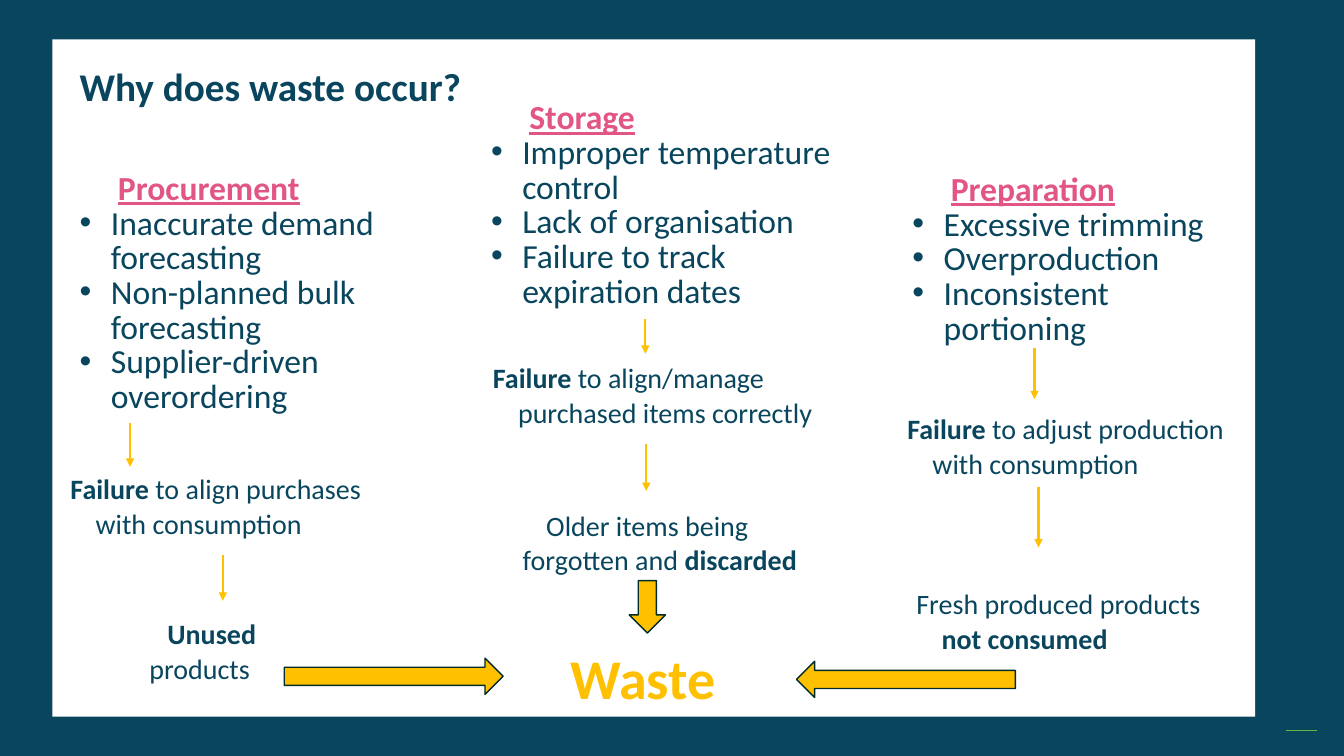
from lxml import etree
from pptx import Presentation
from pptx import util as u
from pptx.dml.color import RGBColor
from pptx.enum import shapes, text
from pptx.oxml.ns import qn

COLORS = {
    "navy": "09465E",
    "white": "FFFFFF",
    "pink": "E25684",
    "amber": "FFC000",
    "outline": "012A2A",
    "green": "60BA47",
}
FONT = "Calibri"
COLUMNS, ROWS = 133.3, 75
CELL = u.Inches(7.5) / ROWS
LINE_PITCH = u.Pt(24.8)
ALIGN = text.PP_ALIGN

CAUSES = [
    ("Procurement", (6.9, 16.6, 38.3, 30.8),
     ["Inaccurate demand forecasting", "Non-planned bulk forecasting", "Supplier-driven overordering"]),
    ("Preparation", (89.5, 16.7, 34.5, 30.8),
     ["Excessive trimming", "Overproduction", "Inconsistent portioning"]),
    ("Storage", (47.7, 9.6, 37.5, 30.8),
     ["Improper temperature control", "Lack of organisation", "Failure to track expiration dates"]),
]
# Each run is (text, bold).
EFFECTS = [
    ((6, 46.2, 30.9, 8.8), ALIGN.LEFT,
     [("Failure", True), (" to align purchases with consumption", False)]),
    ((7.4, 60.6, 19, 8.8), ALIGN.RIGHT, [("Unused", True), (" products ", False)]),
    ((47.9, 35.2, 38.3, 8.8), ALIGN.LEFT,
     [("Failure", True), (" to align/manage purchased items correctly", False)]),
    ((48, 49.8, 32.4, 8.8), ALIGN.CENTER,
     [("Older items being forgotten and ", False), ("discarded", True)]),
    ((89, 40.2, 34.5, 8.8), ALIGN.LEFT,
     [("Failure", True), (" to adjust production with consumption", False)]),
    ((89.9, 57.6, 34.5, 8.8), ALIGN.LEFT,
     [("Fresh produced products ", False), ("not consumed", True)]),
]
# Column, first row, last row.
STEPS = [(12.9, 42, 46.3), (22.1, 55.1, 59.6), (64, 31.6, 35.1),
         (64.1, 44, 48.7), (102.6, 34.5, 39.6), (103, 48.3, 54.3)]
# Box before rotation, then rotation in degrees.
BLOCK_ARROWS = [((79, 65.6, 21.7, 3.6), 180), ((28.2, 65.3, 21.7, 3.6), 0), ((61.6, 58.4, 5.2, 3.6), 90)]


def rgb(name):
    return RGBColor.from_string(COLORS[name])


def cells(*counts):
    return [u.Emu(round(count * CELL)) for count in counts]


def place(shape, box):
    shape.left, shape.top, shape.width, shape.height = cells(*box)


def prepare_frame(shape):
    frame = shape.text_frame
    frame.word_wrap = True
    frame.auto_size = text.MSO_AUTO_SIZE.NONE
    frame.vertical_anchor = text.MSO_ANCHOR.TOP
    return frame


def format_paragraph(paragraph, left=0, indent=0, bullet=None, spacing=LINE_PITCH, align=ALIGN.LEFT):
    """Set margins in inches, then the bullet, spacing and alignment."""
    properties = paragraph._p.get_or_add_pPr()
    properties.set("marL", str(u.Inches(left)))
    properties.set("indent", str(u.Inches(indent)))
    if bullet:
        etree.SubElement(properties, qn("a:buFont")).set("typeface", "Arial")
        etree.SubElement(properties, qn("a:buChar")).set("char", bullet)
    else:
        etree.SubElement(properties, qn("a:buNone"))
    paragraph.line_spacing = spacing
    paragraph.space_before = u.Pt(0)
    paragraph.alignment = align


def add_run(paragraph, words, size, color="navy", bold=False, underline=False):
    run = paragraph.add_run()
    run.text = words
    font = run.font
    font.name, font.size = FONT, u.Pt(size)
    font.bold, font.underline = bold, underline
    font.color.rgb = rgb(color)


def add_solid(slide, kind, box, fill, line=None):
    shape = slide.shapes.add_shape(kind, *cells(*box))
    shape.shadow.inherit = False
    shape.fill.solid()
    shape.fill.fore_color.rgb = rgb(fill)
    if line:
        shape.line.color.rgb = rgb(line)
        shape.line.width = u.Pt(1)
    else:
        shape.line.fill.background()
    return shape


def add_line(slide, ends, color, width, arrow=False):
    line = slide.shapes.add_connector(shapes.MSO_CONNECTOR.STRAIGHT, *cells(*ends))
    line.line.color.rgb = rgb(color)
    line.line.width = u.Pt(width)
    if arrow:
        etree.SubElement(line.line._get_or_add_ln(), qn("a:tailEnd")).set("type", "triangle")
    etree.SubElement(line._element.spPr, qn("a:effectLst"))
    return line


def add_backdrop(slide):
    """Draw the navy frame, white panel and green mark behind the placeholders."""
    rectangle = shapes.MSO_SHAPE.RECTANGLE
    backdrop = [
        add_solid(slide, rectangle, (0, 0, COLUMNS, ROWS), "navy"),
        add_solid(slide, rectangle, (5.2, 3.9, 119.3, 67.2), "white"),
        add_line(slide, (127.5, 72.5, 130.6, 72.5), "green", 1),
    ]
    for position, shape in enumerate(backdrop, start=2):
        slide.shapes._spTree.insert(position, shape._element)


def fill_title(title):
    place(title, (6.9, 6.2, 110, 14.2))
    paragraph = prepare_frame(title).paragraphs[0]
    format_paragraph(paragraph, spacing=0.9)
    add_run(paragraph, "Why does waste occur?", 28, bold=True)


def fill_cause(body, heading, box, reasons):
    place(body, box)
    frame = prepare_frame(body)
    paragraph = frame.paragraphs[0]
    format_paragraph(paragraph, left=0.38)
    add_run(paragraph, heading, 24, "pink", bold=True, underline=True)
    for reason in reasons:
        paragraph = frame.add_paragraph()
        format_paragraph(paragraph, 0.31, -0.31, "•")
        add_run(paragraph, reason, 24)


def add_effect(slide, box, align, runs):
    frame = prepare_frame(slide.shapes.add_textbox(*cells(*box)))
    paragraph = frame.paragraphs[0]
    format_paragraph(paragraph, 0.25, -0.25, align=align)
    for words, bold in runs:
        add_run(paragraph, words, 20, bold=bold)


def add_outcome(slide):
    frame = prepare_frame(slide.shapes.add_textbox(*cells(55.6, 64.1, 20, 10)))
    paragraph = frame.paragraphs[0]
    format_paragraph(paragraph, spacing=0.9)
    add_run(paragraph, "Waste", 40, "amber", bold=True)


def main():
    presentation = Presentation()
    presentation.slide_width, presentation.slide_height = cells(COLUMNS, ROWS)
    comparison = presentation.slide_layouts.get_by_name("Comparison")
    slide = presentation.slides.add_slide(comparison)
    title, *bodies = slide.placeholders
    add_backdrop(slide)
    fill_title(title)
    for body, cause in zip(bodies, CAUSES):
        fill_cause(body, *cause)
    for spare in bodies[len(CAUSES):]:
        slide.shapes._spTree.remove(spare._element)
    for effect in EFFECTS:
        add_effect(slide, *effect)
    for column, first, last in STEPS:
        add_line(slide, (column, first, column, last), "amber", 1.5, arrow=True)
    add_outcome(slide)
    for box, rotation in BLOCK_ARROWS:
        add_solid(slide, shapes.MSO_SHAPE.RIGHT_ARROW, box, "amber", "outline").rotation = rotation
    presentation.save("out.pptx")


if __name__ == "__main__":
    main()
